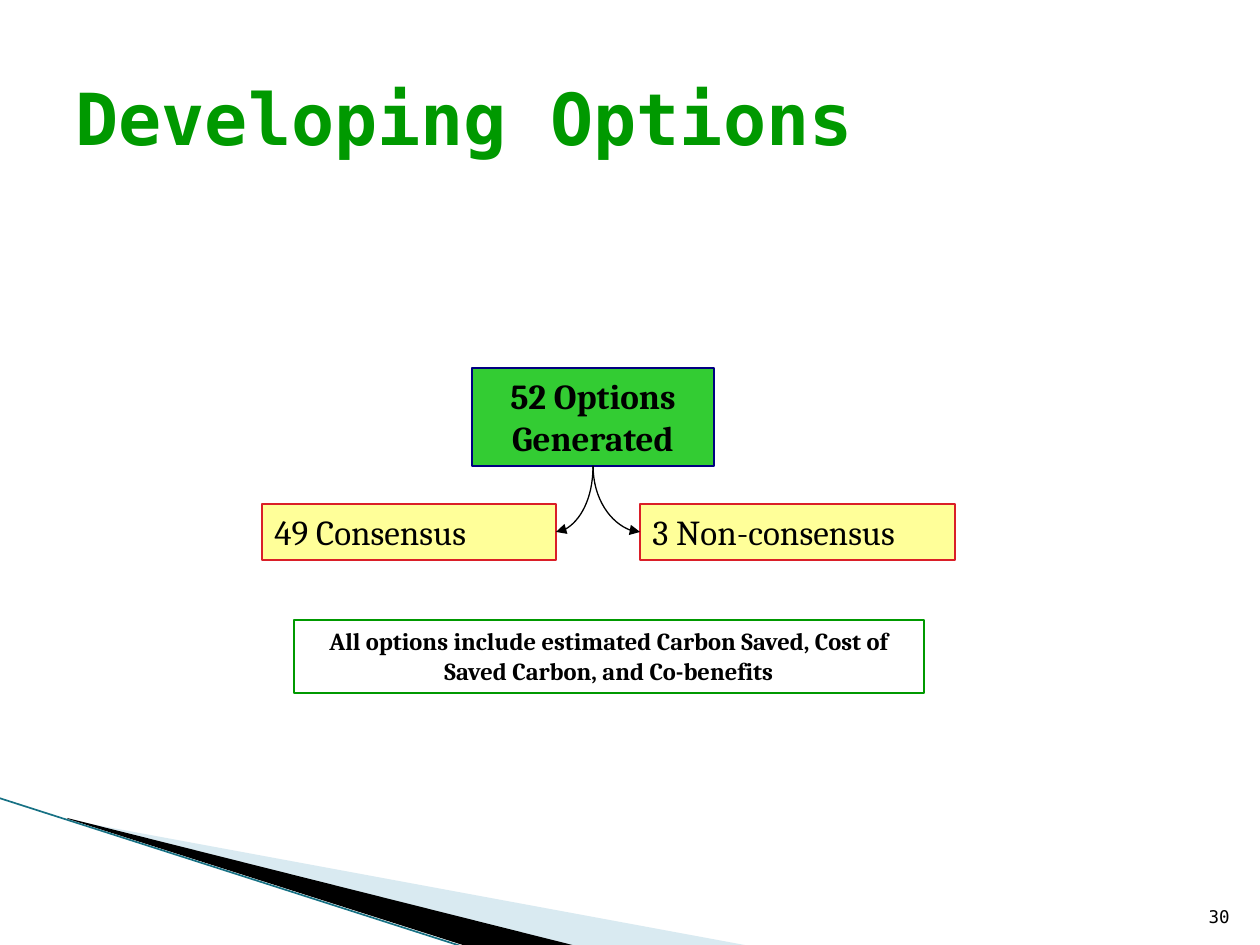
from lxml.etree import SubElement
from pptx import Presentation
from pptx.dml.color import RGBColor
from pptx.enum.shapes import MSO_CONNECTOR as Connector, MSO_SHAPE as Preset
from pptx.enum.text import MSO_ANCHOR as Anchor, MSO_AUTO_SIZE as AutoSize, PP_ALIGN as Align
from pptx.oxml.ns import qn
from pptx.util import Emu, Pt

PX = 914400 / 126
BLACK = RGBColor(0x00, 0x00, 0x00)
GREEN = RGBColor(0x00, 0x99, 0x00)
LIME = RGBColor(0x33, 0xCC, 0x33)
NAVY = RGBColor(0x00, 0x00, 0x80)
YELLOW = RGBColor(0xFF, 0xFF, 0x99)
RED = RGBColor(0xDA, 0x1F, 0x28)
PALE_BLUE = RGBColor(0xA0, 0xCB, 0xDC)
TEAL = RGBColor(0x17, 0x71, 0x84)
MONO, SERIF = "DejaVu Sans Mono", "Cambria"


def px(*lengths):
    return [Emu(round(length * PX)) for length in lengths]


def write(shape, text, color=BLACK, align=Align.LEFT, anchor=Anchor.TOP,
          fit=AutoSize.NONE, **font_format):
    frame = shape.text_frame
    frame.text = text
    for name, value in dict(word_wrap=True, vertical_anchor=anchor, auto_size=fit).items():
        setattr(frame, name, value)
    paragraph = frame.paragraphs[0]
    paragraph.alignment = align
    font = paragraph.runs[0].font
    for name, value in font_format.items():
        setattr(font, name, value)
    font.color.rgb = color


def add_line(slide, kind, start, end, color, width):
    line = slide.shapes.add_connector(kind, *px(*start, *end))
    line.line.color.rgb = color
    line.line.width = Pt(width)
    SubElement(line._element.spPr, qn("a:effectLst"))
    return line


def add_wedge(slide, points, color, opacity=100):
    builder = slide.shapes.build_freeform(*points[0], scale=PX)
    builder.add_line_segments(points[1:], close=True)
    wedge = builder.convert_to_shape()
    wedge.shadow.inherit = False
    wedge.fill.solid()
    wedge.fill.fore_color.rgb = color
    wedge.line.fill.background()
    if opacity < 100:
        rgb = wedge._element.spPr.find(".//" + qn("a:srgbClr"))
        SubElement(rgb, qn("a:alpha"), val=str(opacity * 1000))


def add_corner(slide, left, top):
    """Sweeping wedges in the bottom left corner."""
    def place(*points):
        return [(left + x, top + y) for x, y in points]

    add_wedge(slide, place((69, 22), (750, 148), (575, 148), (69, 21)), PALE_BLUE, 40)
    add_wedge(slide, place((67, 20), (576, 148), (469, 149), (68, 21)), BLACK)
    add_line(slide, Connector.STRAIGHT, *place((-1, 0), (467, 150)), TEAL, 0.95)


def add_label(slide, box, text, **text_format):
    write(slide.shapes.add_textbox(*px(*box)), text, **text_format)


def add_box(slide, box, text, outline, fill=None, **text_format):
    shape = slide.shapes.add_shape(Preset.RECTANGLE, *px(*box))
    shape.shadow.inherit = False
    if fill is None:
        shape.fill.background()
    else:
        shape.fill.solid()
        shape.fill.fore_color.rgb = fill
    shape.line.color.rgb = outline
    shape.line.width = Pt(0.75)
    write(shape, text, fit=AutoSize.SHAPE_TO_FIT_TEXT, name=SERIF, **text_format)


def add_branch(slide, start, end):
    """Curved arrow that leaves downwards and arrives sideways."""
    (x1, y1), (x2, y2) = start, end
    center_x, center_y = (x1 + x2) / 2, (y1 + y2) / 2
    drop, reach = y2 - y1, abs(x2 - x1)
    # Laid out before its quarter turn; a branch to the right is mirrored
    side = 1 if x2 > x1 else -1
    before = (center_x + side * drop / 2, center_y - reach / 2)
    after = (center_x - side * drop / 2, center_y + reach / 2)
    branch = add_line(slide, Connector.CURVE, before, after, BLACK, 0.75)
    properties = branch._element.spPr
    properties.find(qn("a:xfrm")).set("rot", str((270 if side > 0 else 90) * 60000))
    properties.find(qn("a:prstGeom")).set("prst", "curvedConnector2")
    SubElement(properties.find(qn("a:ln")), qn("a:tailEnd"), type="triangle")


def add_options_tree(slide, left, top):
    """Generated options split into two outcomes, with a note below."""
    add_box(slide, (left + 210, top, 242, 98), "52 Options Generated", NAVY, LIME,
            align=Align.CENTER, size=Pt(20), bold=True)
    outcomes = [("49 Consensus", 0, 294, 294), ("3 Non-consensus", 378, 315, 378)]
    for text, x, width, _ in outcomes:
        add_box(slide, (left + x, top + 136, width, 56), text, RED, YELLOW, size=Pt(20))
    for *_, arrival in outcomes:
        add_branch(slide, (left + 331, top + 98), (left + arrival, top + 164))
    add_box(slide, (left + 32, top + 252, 630, 73),
            "All options include estimated Carbon Saved, Cost of Saved Carbon, and Co-benefits",
            GREEN, align=Align.CENTER, size=Pt(14), bold=True)


def main():
    deck = Presentation()
    deck.slide_width, deck.slide_height = px(1260, 945)
    slide = deck.slides.add_slide(deck.slide_layouts[6])
    add_corner(slide, 0, 798)
    add_label(slide, (1192, 883, 50, 50), "30", align=Align.RIGHT,
              anchor=Anchor.BOTTOM, name=MONO, size=Pt(10))
    add_label(slide, (63, 38, 1134, 158), "Developing Options", color=GREEN,
              anchor=Anchor.MIDDLE, name=MONO, size=Pt(41), bold=True)
    add_options_tree(slide, 262, 368)
    deck.save("out.pptx")


if __name__ == "__main__":
    main()
